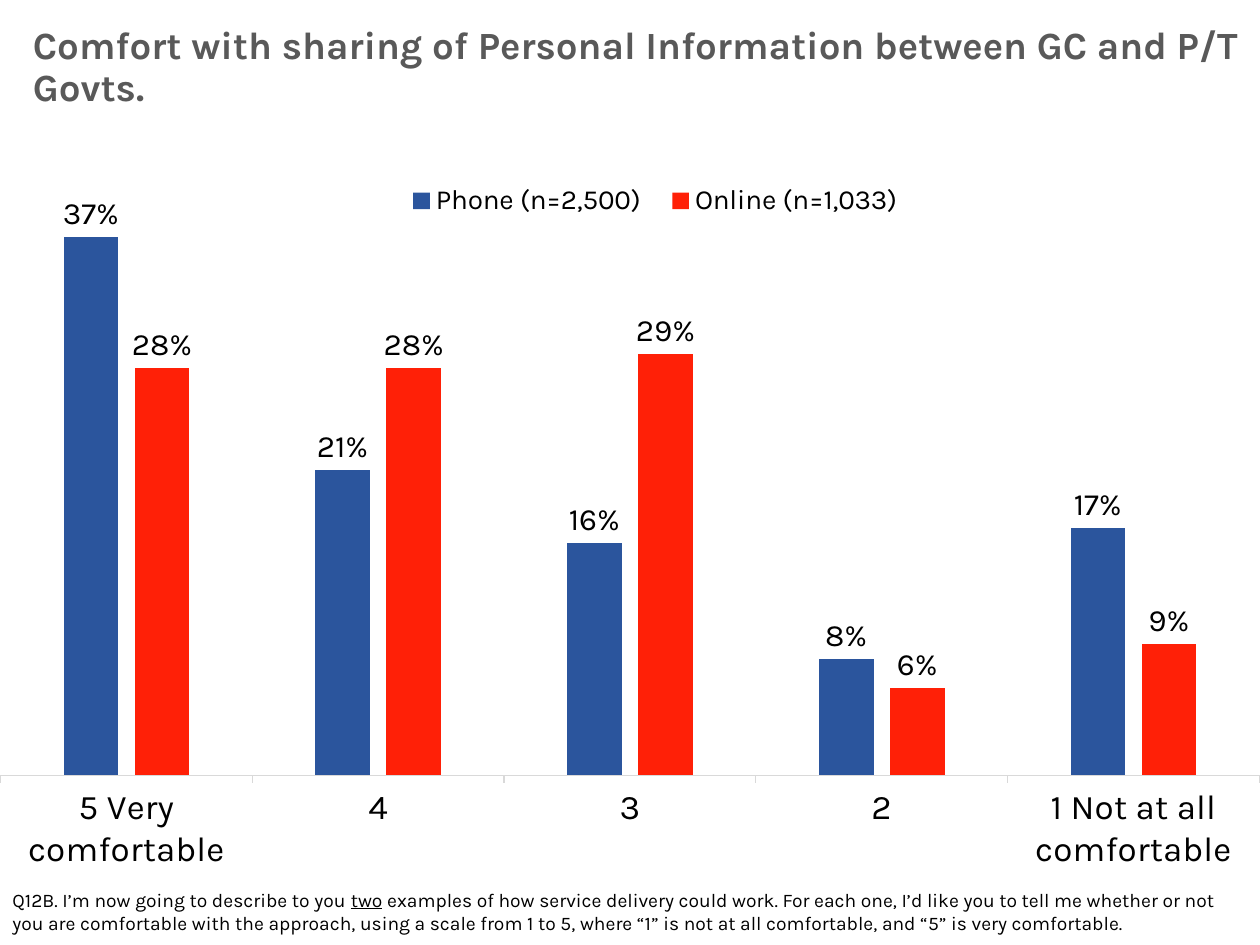
"""Build a slide comparing phone and online comfort with sharing personal information."""
import lxml.etree
import pptx
import pptx.chart.data
import pptx.dml.color
import pptx.enum.chart
import pptx.enum.text
import pptx.oxml
import pptx.oxml.ns
import pptx.util
from pptx.util import Cm

TITLE = "Comfort with sharing of Personal Information between GC and P/T Govts."
FOOTNOTE = [
    ("Q12B. I’m now going to describe to you ", False),
    ("two", True),
    (" examples of how service delivery could work. For each one, I’d like you to tell me "
     "whether or not you are comfortable with the approach, using a scale from 1 to 5, where "
     "“1” is not at all comfortable, and “5” is very comfortable.", False),
]
CATEGORIES = ["5 Very comfortable", "4", "3", "2", "1 Not at all comfortable"]
SERIES = [
    ("Phone (n=2,500)", (0.37, 0.21, 0.16, 0.08, 0.17), "2B559D"),
    ("Online (n=1,033)", (0.28, 0.28, 0.29, 0.06, 0.09), "FF2007"),
]
THEME = {
    "font": "Karla", "text": "000000", "title": "595959", "axis": "D9D9D9",
    "title_size": 22, "category_size": 20, "label_size": 18, "legend_size": 16,
    "chart_size": 10, "footnote_size": 11,
}
PLOT_LAYOUT = {"x": 0, "y": 0.06, "w": 1, "h": 0.82}
LEGEND_LAYOUT = {"x": 0.31, "y": 0.04, "w": 0.42, "h": 0.06}


def color(name):
    return pptx.dml.color.RGBColor.from_string(THEME.get(name, name))


def style_font(font, role, color_name="text", bold=False):
    font.name = THEME["font"]
    font.size = pptx.util.Pt(THEME[role + "_size"])
    font.color.rgb = color(color_name)
    font.bold = bold


def make_layout(box, inner=False):
    layout = pptx.oxml.parse_xml(
        f"<c:layout {pptx.oxml.ns.nsdecls('c')}><c:manualLayout/></c:layout>")
    settings = {"layoutTarget": "inner"} if inner else {}
    settings.update({"xMode": "edge", "yMode": "edge", **box})
    for tag, value in settings.items():
        lxml.etree.SubElement(layout[0], pptx.oxml.ns.qn("c:" + tag), val=str(value))
    return layout


def place_layout(parent, layout, after=None):
    for existing in parent.findall(pptx.oxml.ns.qn("c:layout")):
        parent.remove(existing)
    if after is None:
        parent.insert(0, layout)
    else:
        parent.find(pptx.oxml.ns.qn(after)).addnext(layout)


def add_title(slide):
    title = slide.shapes.title
    title.left, title.top, title.width, title.height = Cm(0.41), Cm(0.41), Cm(25.4), Cm(1.35)
    frame = title.text_frame
    frame.text = TITLE
    frame.word_wrap = True
    frame.auto_size = pptx.enum.text.MSO_AUTO_SIZE.NONE
    frame.vertical_anchor = pptx.enum.text.MSO_ANCHOR.TOP
    paragraph = frame.paragraphs[0]
    paragraph.alignment = pptx.enum.text.PP_ALIGN.LEFT
    paragraph.line_spacing = 0.9
    style_font(paragraph.font, "title", "title", bold=True)


def add_footnote(slide):
    frame = slide.shapes.add_textbox(Cm(0), Cm(17.78), Cm(25.4), Cm(1.19)).text_frame
    frame.word_wrap = True
    frame.auto_size = pptx.enum.text.MSO_AUTO_SIZE.SHAPE_TO_FIT_TEXT
    paragraph = frame.paragraphs[0]
    style_font(paragraph.font, "footnote")
    for text, underlined in FOOTNOTE:
        run = paragraph.add_run()
        run.text = text
        if underlined:
            run.font.underline = True


def add_comfort_chart(slide):
    data = pptx.chart.data.CategoryChartData(number_format="0%")
    data.categories = CATEGORIES
    for name, values, _ in SERIES:
        data.add_series(name, values)
    chart = slide.shapes.add_chart(
        pptx.enum.chart.XL_CHART_TYPE.COLUMN_CLUSTERED,
        Cm(0), Cm(3.05), Cm(25.4), Cm(14.5), data).chart
    style_font(chart.font, "chart")
    chart.has_title = False

    plot = chart.plots[0]
    plot.gap_width, plot.overlap = 230, -30
    plot.vary_by_categories = False
    for series, (_, _, fill) in zip(plot.series, SERIES):
        series.format.fill.solid()
        series.format.fill.fore_color.rgb = color(fill)
        labels = series.data_labels
        labels.show_value = True
        labels.position = pptx.enum.chart.XL_LABEL_POSITION.OUTSIDE_END
        labels.number_format, labels.number_format_is_linked = "0%", False
        style_font(labels.font, "label")

    category_axis = chart.category_axis
    category_axis.major_tick_mark = pptx.enum.chart.XL_TICK_MARK.OUTSIDE
    category_axis.format.line.color.rgb = color("axis")
    category_axis.format.line.width = pptx.util.Pt(0.75)
    style_font(category_axis.tick_labels.font, "category")

    value_axis = chart.value_axis
    value_axis.minimum_scale, value_axis.maximum_scale = 0, 0.4
    value_axis.has_major_gridlines = False
    value_axis.visible = False

    chart.has_legend = True
    legend = chart.legend
    legend.position = pptx.enum.chart.XL_LEGEND_POSITION.TOP
    legend.include_in_layout = False
    style_font(legend.font, "legend")

    plot_area = chart.element.find(".//" + pptx.oxml.ns.qn("c:plotArea"))
    legend_element = chart.element.find(".//" + pptx.oxml.ns.qn("c:legend"))
    place_layout(plot_area, make_layout(PLOT_LAYOUT, inner=True))
    place_layout(legend_element, make_layout(LEGEND_LAYOUT), after="c:legendPos")


def main():
    presentation = pptx.Presentation()
    presentation.slide_width, presentation.slide_height = Cm(25.4), Cm(19.05)
    slide = presentation.slides.add_slide(presentation.slide_layouts[5])
    add_footnote(slide)
    add_title(slide)
    add_comfort_chart(slide)
    presentation.save("out.pptx")


if __name__ == "__main__":
    main()
